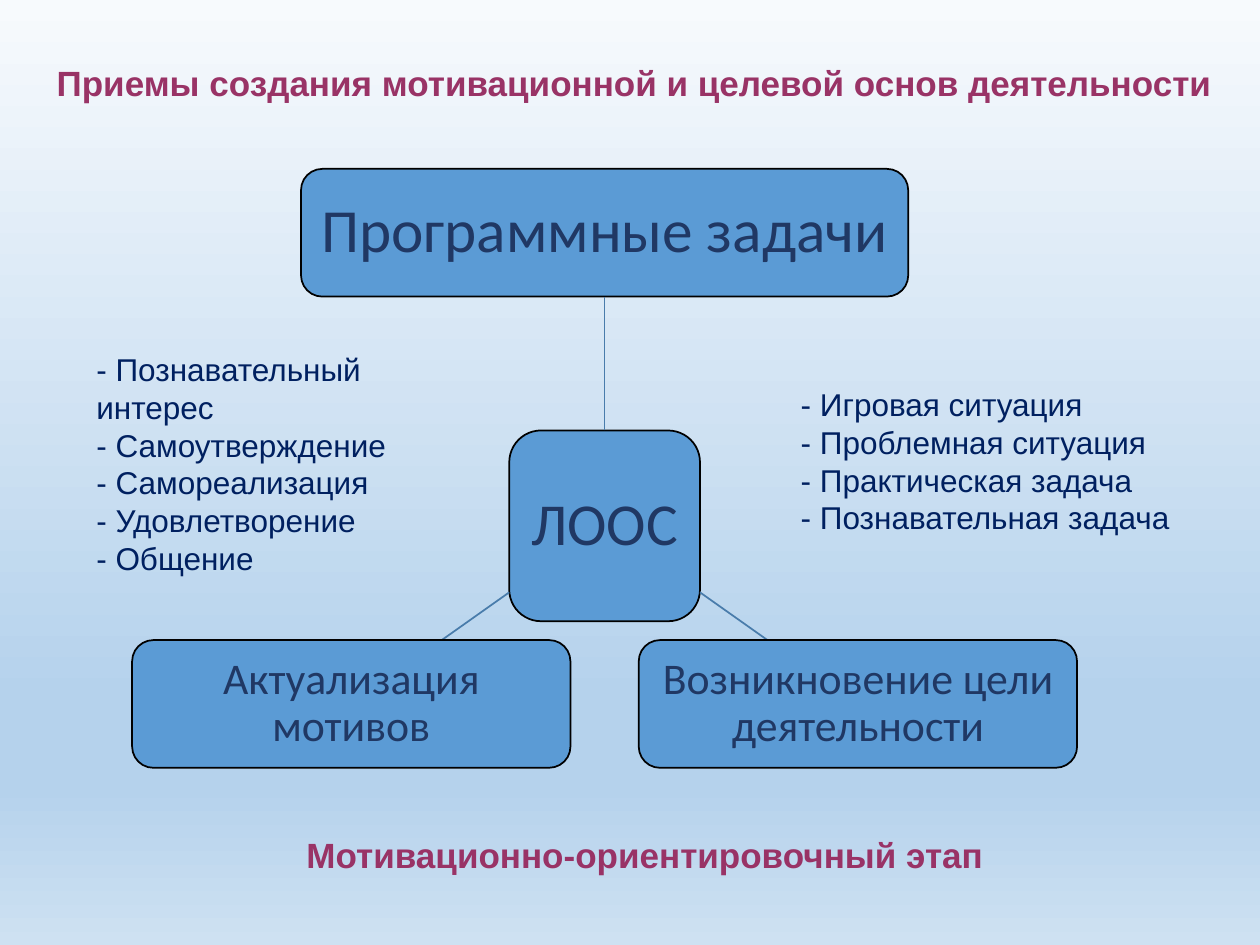
import pptx
import pptx.dml.color
import pptx.enum.shapes
import pptx.enum.text
import pptx.oxml
import pptx.oxml.ns
import pptx.util
from dataclasses import dataclass

Pt = pptx.util.Pt
CENTER = pptx.enum.text.PP_ALIGN.CENTER
LEFT = pptx.enum.text.PP_ALIGN.LEFT
TOP, BOTTOM = 0, 2


@dataclass(frozen=True)
class Theme:
    heading: str = "993366"
    body: str = "002060"
    node_text: str = "203864"
    node_fill: str = "5B9BD5"
    node_line: str = "000000"
    link: str = "497CAB"
    background: tuple = ((0, "F7FAFD"), (74, "B5D2EC"), (83, "B5D2EC"), (100, "CEE1F2"))
    body_font: str = "Arial"
    node_font: str = "Calibri"
    heading_size: int = 20
    body_size: int = 18
    core_size: int = 34
    top_size: int = 35
    branch_size: int = 25


def rgb(value):
    return pptx.dml.color.RGBColor.from_string(value)


class SlideBuilder:
    def __init__(self, s, theme):
        self.s = s
        self.theme = theme

    def background(self):
        fill = self.s.background.fill
        fill.gradient()
        fill.gradient_angle = 270
        stops = self.s.element.find(".//" + pptx.oxml.ns.qn("a:gsLst"))
        for stop in list(stops):
            stops.remove(stop)
        for position, color in self.theme.background:
            stops.append(pptx.oxml.parse_xml(
                f'<a:gs {pptx.oxml.ns.nsdecls("a")} pos="{position * 1000}">'
                f'<a:srgbClr val="{color}"/></a:gs>'))

    def format_text(self, tf, font, size, color, align, bold=False, spacing=None):
        for p in tf.paragraphs:
            p.alignment = align
            p.line_spacing = spacing
            for r in p.runs:
                r.font.name = font
                r.font.size = Pt(size)
                r.font.bold = bold
                r.font.color.rgb = rgb(color)

    def textbox(self, box, text):
        tf = self.s.shapes.add_textbox(*map(Pt, box)).text_frame
        tf.word_wrap = True
        tf.text = text
        return tf

    def heading(self, box, text):
        t = self.theme
        tf = self.textbox(box, text)
        self.format_text(tf, t.body_font, t.heading_size, t.heading, CENTER, bold=True)

    def dash_list(self, box, items):
        t = self.theme
        tf = self.textbox(box, "\n".join(f"- {item}" for item in items))
        self.format_text(tf, t.body_font, t.body_size, t.body, LEFT)

    def node(self, box, text, size, inset):
        t = self.theme
        kind = pptx.enum.shapes.MSO_SHAPE.ROUNDED_RECTANGLE
        sp = self.s.shapes.add_shape(kind, *map(Pt, box))
        sp.shadow.inherit = False
        sp.fill.solid()
        sp.fill.fore_color.rgb = rgb(t.node_fill)
        sp.line.color.rgb = rgb(t.node_line)
        sp.line.width = Pt(1)
        tf = sp.text_frame
        tf.word_wrap = True
        tf.vertical_anchor = pptx.enum.text.MSO_ANCHOR.MIDDLE
        tf.margin_left = tf.margin_right = tf.margin_top = tf.margin_bottom = Pt(inset)
        tf.text = text
        self.format_text(tf, t.node_font, size, t.node_text, CENTER, spacing=0.9)
        return sp

    def link(self, start, end):
        kind = pptx.enum.shapes.MSO_CONNECTOR.STRAIGHT
        line = self.s.shapes.add_connector(kind, *map(Pt, start + end))
        line.line.color.rgb = rgb(self.theme.link)
        line.line.width = Pt(1)
        line._element.spPr.append(
            pptx.oxml.parse_xml(f'<a:effectLst {pptx.oxml.ns.nsdecls("a")}/>'))
        return line


def main():
    prs = pptx.Presentation()
    prs.slide_width, prs.slide_height = Pt(720), Pt(540)
    theme = Theme()
    b = SlideBuilder(prs.slides.add_slide(prs.slide_layouts[6]), theme)
    b.background()

    b.heading((25, 31.5, 675, 32), "Приемы создания мотивационной и целевой основ деятельности")

    axis, core_top, core_side = 345.5, 246, 109
    top_y, top_width, node_height = 96.5, 347, 73
    branch_y, branch_width, branch_gap = 365.75, 250.5, 39
    core = b.node((axis - core_side / 2, core_top, core_side, core_side),
                  "ЛООС", theme.core_size, 6.5)
    tasks = b.node((axis - top_width / 2, top_y, top_width, node_height),
                   "Программные задачи", theme.top_size, 7)
    link = b.link((axis, core_top), (axis, top_y + node_height))
    link.begin_connect(core, TOP)
    link.end_connect(tasks, BOTTOM)

    branches = ((1, axis + branch_gap / 2, "Возникновение цели деятельности"),
                (-1, axis - branch_gap / 2 - branch_width, "Актуализация мотивов"))
    for side, left, text in branches:
        b.link((axis + side * core_side / 2, 338.5), (axis + side * 93, branch_y))
        b.node((left, branch_y, branch_width, node_height), text, theme.branch_size, 5)

    b.dash_list((450.5, 216.5, 227, 94.5), (
        "Игровая ситуация", "Проблемная ситуация",
        "Практическая задача", "Познавательная задача"))
    b.dash_list((48, 196.5, 199, 138), (
        "Познавательный интерес", "Самоутверждение", "Самореализация",
        "Удовлетворение", "Общение"))
    b.heading((31, 473, 675, 32), "Мотивационно-ориентировочный этап")

    prs.save("out.pptx")


if __name__ == "__main__":
    main()
